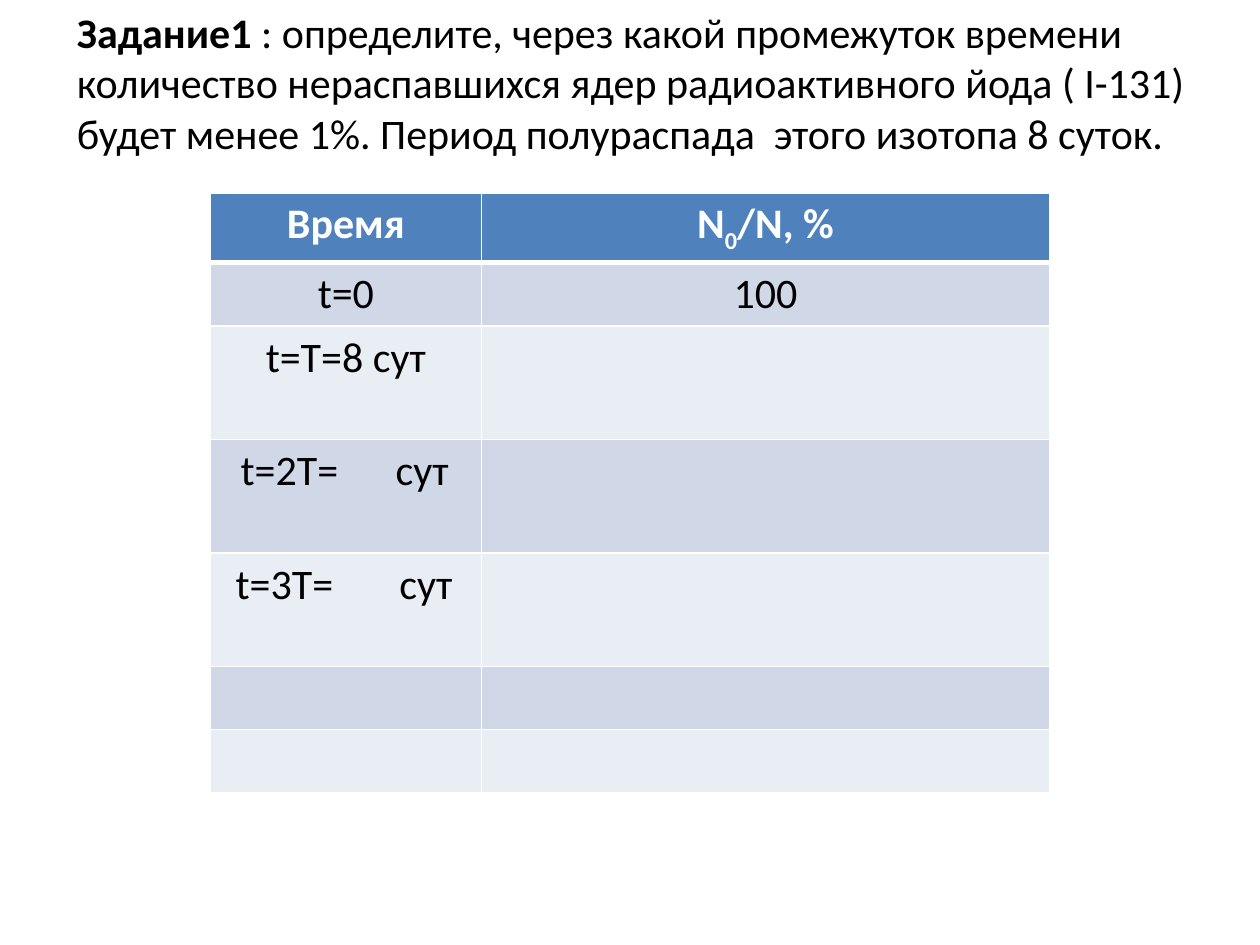
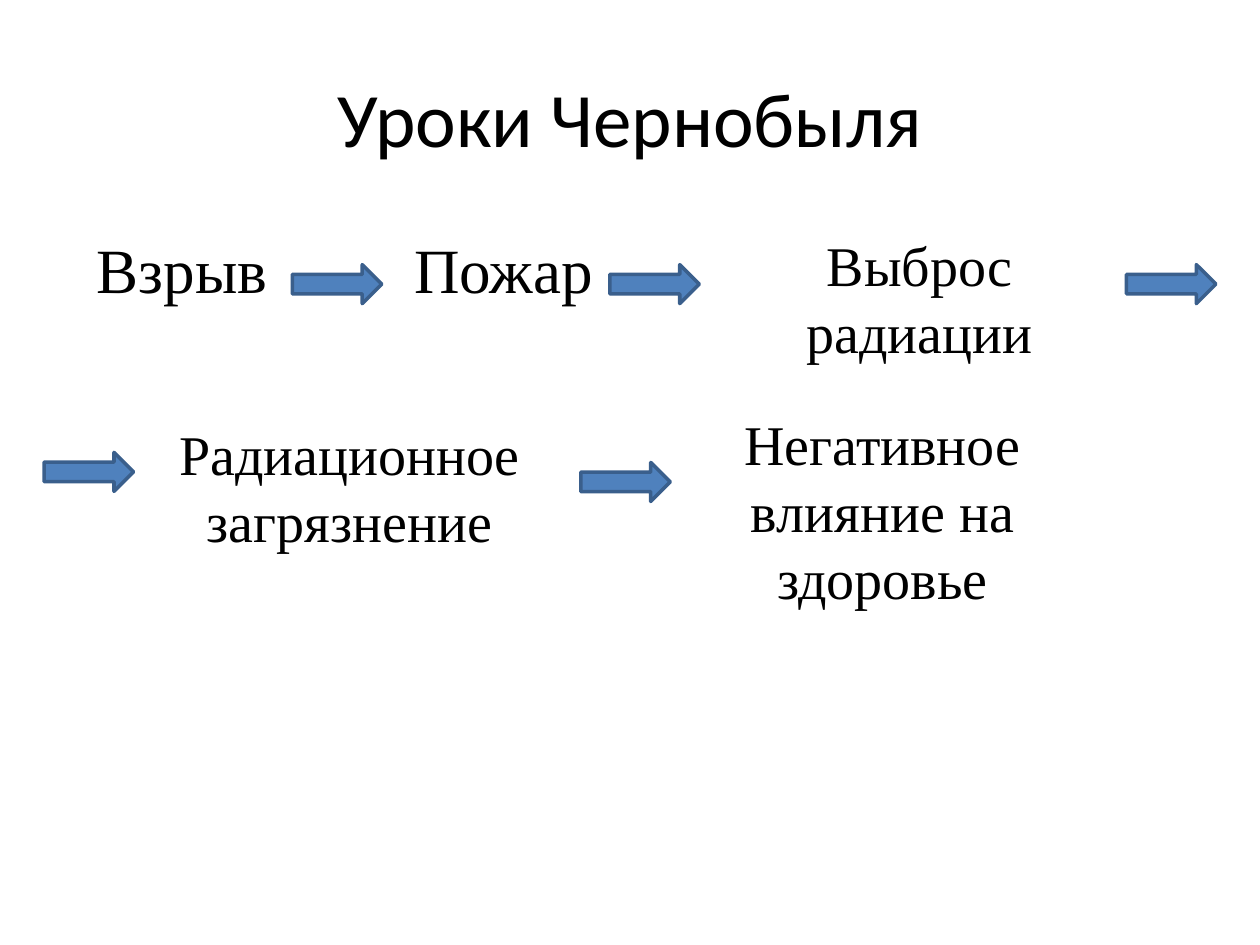
import pptx
import pptx.util
import pptx.dml.color
import pptx.enum.shapes
import pptx.enum.text
import pptx.oxml
import pptx.oxml.ns

Inches, Pt = pptx.util.Inches, pptx.util.Pt
ALIGN = pptx.enum.text.PP_ALIGN
ANCHOR = pptx.enum.text.MSO_ANCHOR
NS = pptx.oxml.ns.nsdecls("a")

HUES = {
    "text": "000000",
    "white": "FFFFFF",
    "blue": "4F81BD",
    "edge": "3A5F8C",
    "odd": "D0D8E8",
    "even": "E9EDF4",
}
SANS, SERIF = "Calibri", "Times New Roman"


def hue(name):
    return pptx.dml.color.RGBColor.from_string(HUES[name])


class Deck:
    """Holds the style and the current slide."""

    def __init__(self):
        self.prs = pptx.Presentation()
        self.prs.slide_width = Inches(10)
        self.prs.slide_height = Inches(7.5)
        self.slide = None

    def add(self):
        """Start a slide that has a title."""
        self.slide = self.prs.slides.add_slide(self.prs.slide_layouts[5])

    def put(self, para, text, color="text", base=0, **form):
        """Add a run; base shifts its baseline by a percentage."""
        run = para.add_run()
        run.text = text
        for key, value in form.items():
            setattr(run.font, key, value)
        run.font.color.rgb = hue(color)
        if base:
            run._r.get_or_add_rPr().set("baseline", str(base * 1000))

    def title(self, runs, box, size, align, anchor):
        """Fill the title with (text, bold) runs."""
        shape = self.slide.shapes.title
        shape.left, shape.top, shape.width, shape.height = map(Inches, box)
        frame = shape.text_frame
        frame.auto_size = pptx.enum.text.MSO_AUTO_SIZE.NONE
        frame.word_wrap = True
        frame.vertical_anchor = anchor
        para = frame.paragraphs[0]
        para.alignment = align
        for text, bold in runs:
            self.put(para, text, name=SANS, size=Pt(size), bold=bold)

    def label(self, lines, box, size, align=ALIGN.CENTER):
        frame = self.slide.shapes.add_textbox(*map(Inches, box)).text_frame
        frame.word_wrap = True
        for i, line in enumerate(lines):
            para = frame.add_paragraph() if i else frame.paragraphs[0]
            para.alignment = align
            self.put(para, line, name=SERIF, size=Pt(size))

    def arrow(self, left, top):
        kind = pptx.enum.shapes.MSO_SHAPE.RIGHT_ARROW
        shape = self.slide.shapes.add_shape(
            kind, *map(Inches, (left, top, 0.71, 0.31)))
        shape.shadow.inherit = False
        shape.fill.solid()
        shape.fill.fore_color.rgb = hue("blue")
        shape.line.color.rgb = hue("edge")
        shape.line.width = Pt(2)

    def border(self, cell, row):
        """Draw white cell edges, thick below the header."""
        thick = {(0, "B"), (1, "T")}
        for side in "LRTB":
            width = Pt(3 if (row, side) in thick else 1)
            cell._tc.get_or_add_tcPr().append(pptx.oxml.parse_xml(
                f'<a:ln{side} {NS} w="{width}"><a:solidFill>'
                f'<a:srgbClr val="{HUES["white"]}"/></a:solidFill></a:ln{side}>'))

    def table(self, rows, left, top, widths, heights):
        """Build a banded table; a cell is a list of (text, base) runs."""
        grid = self.slide.shapes.add_table(
            len(rows), len(widths), Inches(left), Inches(top),
            Inches(sum(widths)), Inches(sum(heights))).table
        for col, width in zip(grid.columns, widths):
            col.width = Inches(width)
        for r, (row, height) in enumerate(zip(rows, heights)):
            grid.rows[r].height = Inches(height)
            fill = "blue" if r == 0 else "odd" if r % 2 else "even"
            for c, runs in enumerate(row):
                cell = grid.cell(r, c)
                self.border(cell, r)
                cell.fill.solid()
                cell.fill.fore_color.rgb = hue(fill)
                para = cell.text_frame.paragraphs[0]
                para.alignment = ALIGN.CENTER
                for text, base in runs:
                    self.put(para, text, "text" if r else "white", base,
                             name=SANS, size=Pt(24), bold=r == 0)
        return grid

    def gap(self, cell, left, stop):
        """Leave room for an answer at the tab of a cell."""
        cell.margin_left = Inches(left)
        para = cell.text_frame.paragraphs[0]
        para.alignment = ALIGN.LEFT
        para._p.get_or_add_pPr().append(pptx.oxml.parse_xml(
            f'<a:tabLst {NS}><a:tab pos="{Inches(stop)}" algn="l"/></a:tabLst>'))


def task(deck):
    deck.add()
    deck.title(
        [("Задание1 ", True),
         (": определите, через какой промежуток времени количество "
          "нераспавшихся ядер радиоактивного йода ( I-131) будет менее 1%. "
          "Период полураспада  этого изотопа 8 суток.", False)],
        (0.51, 0, 9.25, 1.31), 24, ALIGN.LEFT, ANCHOR.TOP)
    rows = [
        [[("Время", 0)], [("N", 0), ("0", -25), ("/N, %", 0)]],
        [[("t=0", 0)], [("100", 0)]],
        [[("t=Т=8 сут", 0)], []],
        [[("t=2Т=\tсут", 0)], []],
        [[("t=3Т=\tсут", 0)], []],
        [[], []],
        [[], []],
    ]
    heights = [0.54, 0.5, 0.9, 0.9, 0.9, 0.5, 0.5]
    grid = deck.table(rows, 1.67, 1.53, [2.15, 4.51], heights)
    deck.gap(grid.cell(3, 0), 0.24, 1.23)
    deck.gap(grid.cell(4, 0), 0.2, 1.3)


def lessons(deck):
    deck.add()
    deck.title([("Уроки Чернобыля", False)], (0.5, 0.3, 9, 1.25), 44,
               ALIGN.CENTER, ANCHOR.MIDDLE)
    for word, left in (("Взрыв", 0.67), ("Пожар", 3.19)):
        deck.label([word], (left, 1.78, 1.65, 0.71), 36, ALIGN.LEFT)
    for lines, box in (
            (["Выброс", "радиации"], (5.47, 1.78, 3.66, 1.18)),
            (["Радиационное загрязнение"], (0.67, 3.28, 4.21, 1.18)),
            (["Негативное влияние на здоровье"], (5.47, 3.2, 3.07, 1.72))):
        deck.label(lines, box, 32)
    for left, top in ((2.32, 2.1), (4.84, 2.1), (8.94, 2.1),
                      (0.35, 3.59), (4.61, 3.67)):
        deck.arrow(left, top)


def main():
    deck = Deck()
    task(deck)
    lessons(deck)
    deck.prs.save("out.pptx")


if __name__ == "__main__":
    main()
